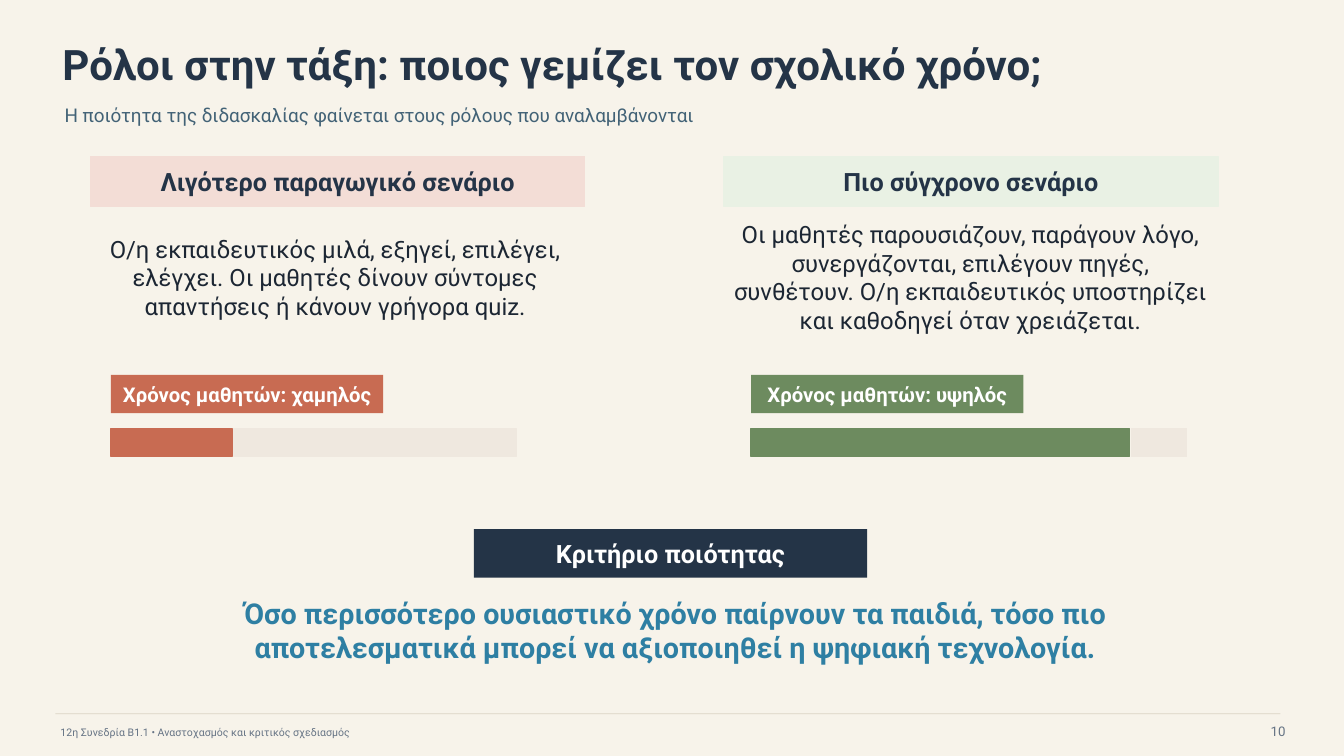
import pptx
import pptx.util
import pptx.dml.color
import pptx.enum.shapes
import pptx.enum.text
import pptx.oxml.ns
from lxml import etree

RGB = pptx.dml.color.RGBColor
PAPER = RGB(0xF7, 0xF3, 0xEA)
NAVY = RGB(0x24, 0x34, 0x47)
SLATE = RGB(0x42, 0x62, 0x76)
GREY = RGB(0x65, 0x73, 0x84)
INK = RGB(0x1C, 0x26, 0x33)
WHITE = RGB(0xFF, 0xFF, 0xFF)
BLUE = RGB(0x2E, 0x7F, 0xA3)
RULE = RGB(0xD8, 0xD0, 0xC1)
TRACK = RGB(0xEF, 0xE8, 0xDF)
PINK = RGB(0xF3, 0xDD, 0xD6)
RUST = RGB(0xC8, 0x6B, 0x52)
MINT = RGB(0xE9, 0xF1, 0xE4)
GREEN = RGB(0x6D, 0x8B, 0x5F)

FONT = "Roboto"
PX = 9144  # 100 px to the inch
BAR_TOP, BAR_HEIGHT, BAR_GAP = 425, 28, 2
ALIGN = pptx.enum.text.PP_ALIGN


def px(*lengths):
    return [pptx.util.Emu(n * PX) for n in lengths]


def write(sp, text, size=18, color=NAVY, bold=False, align=ALIGN.LEFT):
    tf = sp.text_frame
    tf.word_wrap = True
    tf.vertical_anchor = pptx.enum.text.MSO_ANCHOR.MIDDLE
    tf.margin_left = tf.margin_top = tf.margin_right = tf.margin_bottom = 0
    p = tf.paragraphs[0]
    p.alignment = align
    r = p.add_run()
    r.text = text
    r.font.name = FONT
    r.font.size = pptx.util.Pt(size)
    r.font.bold = bold
    r.font.color.rgb = color


def add_text(s, box, text, **fmt):
    write(s.shapes.add_textbox(*px(*box)), text, **fmt)


def add_rect(s, box, fill, outlined=True):
    sp = s.shapes.add_shape(pptx.enum.shapes.MSO_SHAPE.RECTANGLE, *px(*box))
    sp.shadow.inherit = False
    sp.fill.solid()
    sp.fill.fore_color.rgb = fill
    if outlined:
        sp.line.color.rgb = fill
        sp.line.width = pptx.util.Pt(1)
    else:
        sp.line.fill.background()
    return sp


def add_label(s, box, text, fill, color=WHITE, size=18, outlined=False):
    write(add_rect(s, box, fill, outlined), text, size=size, color=color,
          bold=True, align=ALIGN.CENTER)


def add_rule(s, x1, x2, y):
    ln = s.shapes.add_connector(pptx.enum.shapes.MSO_CONNECTOR.STRAIGHT,
                                *px(x1, y, x2, y))
    ln.line.color.rgb = RULE
    ln.line.width = pptx.util.Pt(0.5)
    qn = pptx.oxml.ns.qn
    sp_pr = ln._element.spPr
    color = sp_pr.find(".//" + qn("a:srgbClr"))
    etree.SubElement(color, qn("a:alpha")).set("val", "90000")
    etree.SubElement(sp_pr, qn("a:effectLst"))


def add_scenario(s, head_x, body_x, bar_x, title, body, tag, tint, accent,
                 filled, rest):
    add_label(s, (head_x, 155, 490, 50), title, tint, color=NAVY, outlined=True)
    add_text(s, (body_x, 225, 475, 100), body, size=17, color=INK,
             align=ALIGN.CENTER)
    add_label(s, (bar_x, 372, 270, 38), tag, accent, size=14.5)
    # Share of time taken by the pupils, then the remainder
    add_rect(s, (bar_x, BAR_TOP, filled, BAR_HEIGHT), accent)
    add_rect(s, (bar_x + filled + BAR_GAP, BAR_TOP, rest, BAR_HEIGHT), TRACK)


def main():
    prs = pptx.Presentation()
    prs.slide_width, prs.slide_height = px(1333, 750)
    s = prs.slides.add_slide(prs.slide_layouts[6])
    s.background.fill.solid()
    s.background.fill.fore_color.rgb = PAPER

    # Heading
    add_text(s, (62, 36, 990, 55),
             "Ρόλοι στην τάξη: ποιος γεμίζει τον σχολικό χρόνο;",
             size=30, bold=True)
    add_text(s, (64, 96, 1020, 36),
             "Η ποιότητα της διδασκαλίας φαίνεται στους ρόλους που αναλαμβάνονται",
             size=13.5, color=SLATE)

    # Footer
    add_rule(s, 55, 1270, 708)
    add_text(s, (60, 717, 870, 18),
             "12η Συνεδρία Β1.1 • Αναστοχασμός και κριτικός σχεδιασμός",
             size=7.5, color=GREY)
    add_text(s, (1215, 711, 60, 28), "10", size=9.5, color=GREY,
             align=ALIGN.RIGHT)

    # Two scenarios
    add_scenario(s, 90, 95, 110, "Λιγότερο παραγωγικό σενάριο",
                 "Ο/η εκπαιδευτικός μιλά, εξηγεί, επιλέγει, ελέγχει. "
                 "Οι μαθητές δίνουν σύντομες απαντήσεις ή κάνουν γρήγορα quiz.",
                 "Χρόνος μαθητών: χαμηλός", PINK, RUST, filled=120, rest=280)
    add_scenario(s, 718, 725, 745, "Πιο σύγχρονο σενάριο",
                 "Οι μαθητές παρουσιάζουν, παράγουν λόγο, συνεργάζονται, "
                 "επιλέγουν πηγές, συνθέτουν. Ο/η εκπαιδευτικός υποστηρίζει "
                 "και καθοδηγεί όταν χρειάζεται.",
                 "Χρόνος μαθητών: υψηλός", MINT, GREEN, filled=375, rest=55)

    # Quality criterion
    add_label(s, (470, 525, 390, 48), "Κριτήριο ποιότητας", NAVY)
    add_text(s, (165, 600, 1010, 50),
             "Όσο περισσότερο ουσιαστικό χρόνο παίρνουν τα παιδιά, τόσο πιο "
             "αποτελεσματικά μπορεί να αξιοποιηθεί η ψηφιακή τεχνολογία.",
             size=20.5, color=BLUE, bold=True, align=ALIGN.CENTER)

    prs.save("out.pptx")


if __name__ == "__main__":
    main()
